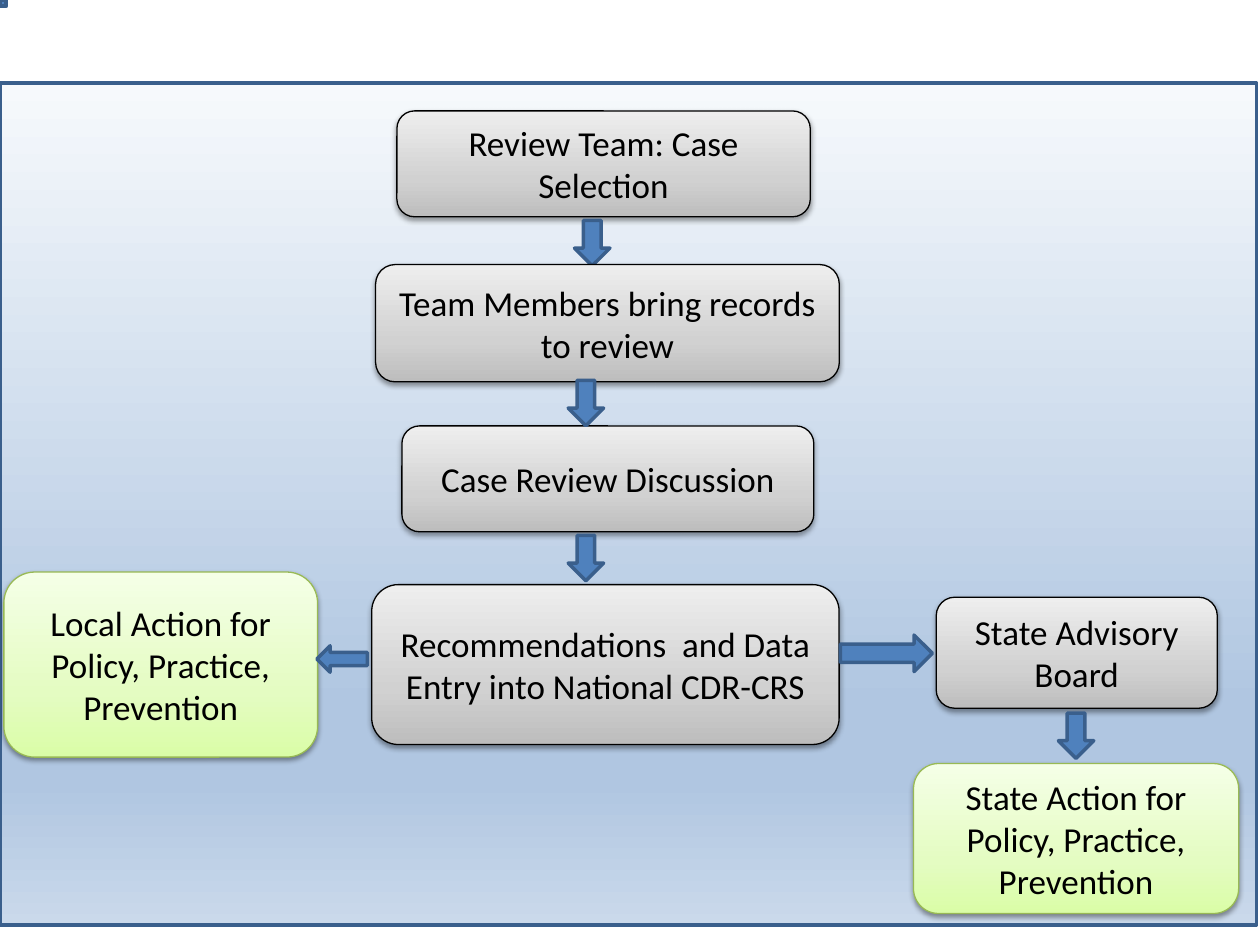
"""Build a flow chart slide of the case review process."""
from dataclasses import dataclass

from pptx import Presentation
from pptx.dml.color import RGBColor as RGB
from pptx.enum.shapes import MSO_SHAPE as Kind
from pptx.enum.text import MSO_ANCHOR as Anchor, PP_ALIGN as Align
from pptx.oxml import parse_xml
from pptx.oxml.ns import nsdecls, qn
from pptx.util import Pt


@dataclass(frozen=True)
class Theme:
    font: str = "Calibri"
    body: int = 20
    ink: str = "000000"
    blue: str = "4F81BD"
    edge: str = "3A5F8C"
    leaf: str = "98B955"
    sky: tuple = ((0, "F6F9FC"), (74, "B0C6E1"), (83, "B0C6E1"), (100, "CAD9EB"))
    gray: tuple = ((0, "BDBDBD"), (35, "D1D1D1"), (100, "EEEEEE"))
    green: tuple = ((0, "DAFDA7"), (35, "E4FCC2"), (100, "F5FFE7"))


T = Theme()


def blend(shape, stops, angle):
    shape.fill.solid()
    old = shape._element.spPr.find(qn("a:solidFill"))
    marks = "".join(
        f'<a:gs pos="{pos * 1000}"><a:srgbClr val="{color}"/></a:gs>'
        for pos, color in stops
    )
    new = parse_xml(
        f'<a:gradFill {nsdecls("a")} rotWithShape="1"><a:gsLst>{marks}</a:gsLst>'
        f'<a:lin ang="{angle * 60000}" scaled="0"/></a:gradFill>'
    )
    old.getparent().replace(old, new)


def shade(shape):
    shape._element.spPr.find(qn("a:effectLst")).append(parse_xml(
        f'<a:outerShdw {nsdecls("a")} blurRad="{Pt(3.1)}" dist="{Pt(1.6)}" '
        'dir="5400000" rotWithShape="0"><a:srgbClr val="000000">'
        '<a:alpha val="38000"/></a:srgbClr></a:outerShdw>'
    ))


def form(slide, kind, spot, edge=T.edge, width=2):
    shape = slide.shapes.add_shape(kind, *map(Pt, spot))
    shape.shadow.inherit = False
    shape.fill.solid()
    shape.fill.fore_color.rgb = RGB.from_string(T.blue)
    shape.line.color.rgb = RGB.from_string(edge)
    shape.line.width = Pt(width)
    return shape


def write(frame, text):
    frame.word_wrap = True
    frame.vertical_anchor = Anchor.MIDDLE
    para = frame.paragraphs[0]
    para.text = text
    para.alignment = Align.CENTER
    font = para.font
    font.name, font.size = T.font, Pt(T.body)
    font.color.rgb = RGB.from_string(T.ink)


def step(slide, text, spot, stops=T.gray, edge=T.ink):
    box = form(slide, Kind.ROUNDED_RECTANGLE, spot, edge, 0.75)
    blend(box, stops, 270)
    shade(box)
    write(box.text_frame, text)


def action(slide, level, spot):
    text = f"{level} Action for Policy, Practice, Prevention"
    step(slide, text, spot, T.green, T.leaf)


def down(slide, left, top):
    form(slide, Kind.DOWN_ARROW, (left, top, 20.2, 25.9))


def main():
    deck = Presentation()
    deck.slide_width, deck.slide_height = Pt(720), Pt(540)
    slide = deck.slides.add_slide(deck.slide_layouts[6])

    panel = form(slide, Kind.RECTANGLE, (0, 47.5, 718, 481))
    blend(panel, T.sky, 90)

    action(slide, "State", (522, 436.3, 185.8, 85.7))
    step(slide, "Review Team: Case Selection", (226.8, 63.4, 236.2, 60.5))
    down(slide, 328.3, 126)
    step(slide, "Team Members bring records to review", (214.6, 151.2, 265, 67))
    step(slide, "Case Review Discussion", (229.7, 243.4, 235.4, 60.5))
    step(slide, "Recommendations  and Data Entry into National CDR-CRS",
         (212.4, 334.1, 267.1, 91.4))
    action(slide, "Local", (2.2, 326.9, 179.3, 105.8))
    step(slide, "State Advisory Board", (535, 341.3, 160.6, 63.4))

    down(slide, 324.7, 217.4)
    down(slide, 324.7, 306)
    form(slide, Kind.RIGHT_ARROW, (480.2, 362.9, 52.6, 20.9))
    form(slide, Kind.LEFT_ARROW, (181.1, 369, 28.8, 15.1))
    down(slide, 604.8, 407.5)
    form(slide, Kind.RECTANGLE, (0, 0, 3.6, 3.6))

    deck.save("out.pptx")


if __name__ == "__main__":
    main()
